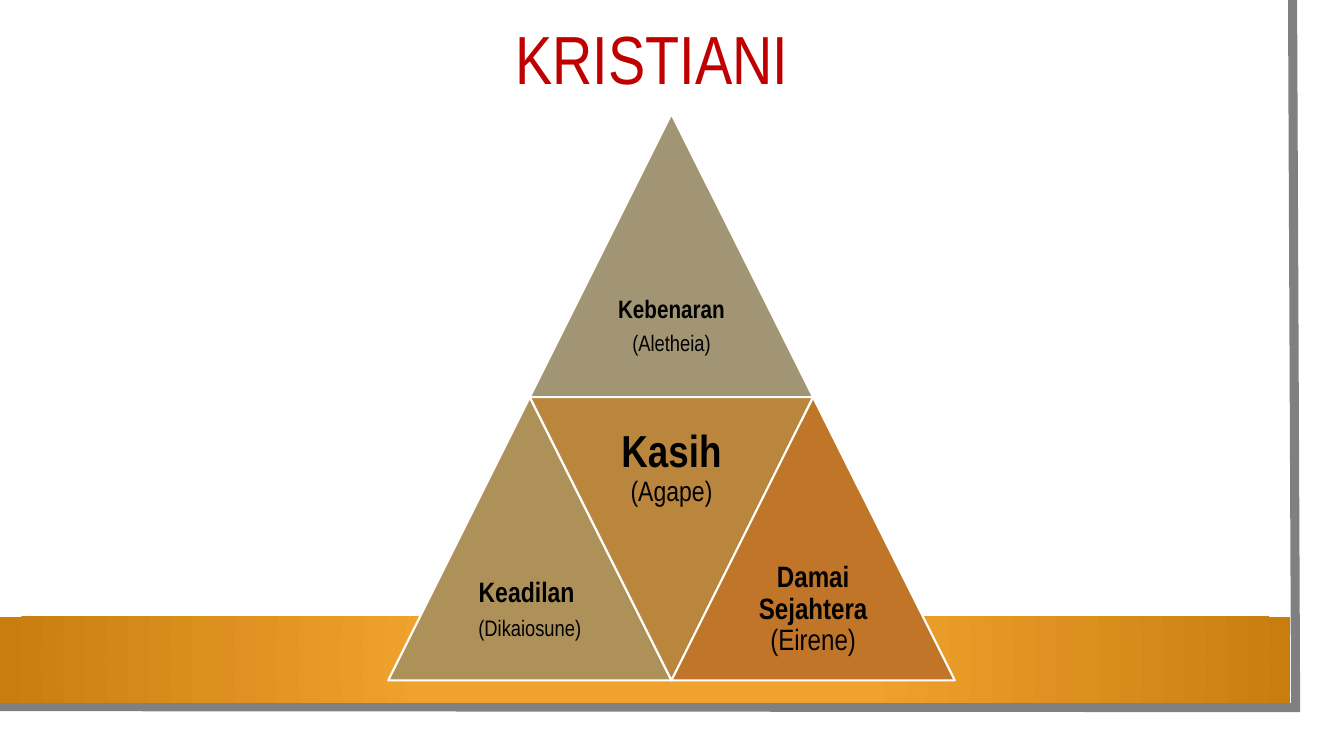
import pptx
import pptx.dml.color
import pptx.enum.shapes
import pptx.enum.text
import pptx.oxml
import pptx.oxml.ns
import pptx.util

FONT = "Arial Narrow"
WIDTH, HEIGHT = 13.33, 7.5
GRID_LEFT, GRID_TOP, CELL = 3.85, 1.13, 1.405

TRIANGLES = [
    (1, 0, False, "A19574", 0.07, [[("Kebenaran", 18, True)], [("(Aletheia)", 16, False)]]),
    (0, 2, False, "AE9159", 0.08, [[("Keadilan ", 20, True)], [("(Dikaiosune)", 16, False)]]),
    (1, 2, True, "BA863E", 0.13, [[("Kasih", 32, True), (" (Agape)", 20, False)]]),
    (2, 2, False, "C17529", 0.09, [[("Damai Sejahtera ", 21, True), ("(Eirene)", 21, False)]]),
]


def inches(*values):
    return [pptx.util.Inches(value) for value in values]


def grid_box(column, row, span):
    return inches(GRID_LEFT + column * CELL, GRID_TOP + row * CELL, span * CELL, span * CELL)


def color(hex_code):
    return pptx.dml.color.RGBColor.from_string(hex_code)


def add_run(paragraph, text, size=18, bold=False, hex_code="000000"):
    run = paragraph.add_run()
    run.text = text
    run.font.name = FONT
    run.font.size = pptx.util.Pt(size)
    run.font.bold = bold
    run.font.color.rgb = color(hex_code)


def format_paragraph(paragraph, space_after=0):
    paragraph.alignment = pptx.enum.text.PP_ALIGN.CENTER
    paragraph.line_spacing = 0.9
    paragraph.space_before = pptx.util.Pt(0)
    paragraph.space_after = pptx.util.Pt(space_after)


def format_frame(frame, inset):
    frame.word_wrap = True
    frame.auto_size = pptx.enum.text.MSO_AUTO_SIZE.NONE
    frame.vertical_anchor = pptx.enum.text.MSO_ANCHOR.MIDDLE
    margin = pptx.util.Inches(inset)
    frame.margin_left = frame.margin_right = margin
    frame.margin_top = frame.margin_bottom = margin


def add_page_edge(slide):
    builder = slide.shapes.build_freeform(*inches(12.82, 0), scale=1.0)
    builder.add_line_segments([inches(12.85, 7.02), inches(0, 7.01)], close=False)
    edge = builder.convert_to_shape()
    edge.shadow.inherit = False
    edge.fill.background()
    edge.line.color.rgb = color("808080")
    edge.line.width = pptx.util.Pt(6.5)
    miter = pptx.oxml.parse_xml(f'<a:miter {pptx.oxml.ns.nsdecls("a")} lim="800000"/>')
    edge.line._get_or_add_ln().append(miter)


def add_band(slide):
    band = slide.shapes.add_shape(
        pptx.enum.shapes.MSO_SHAPE.RECTANGLE, *inches(0, 6.12, 12.8, 0.85))
    band.shadow.inherit = False
    band.line.fill.background()
    band.fill.gradient()
    for stop, (position, hex_code) in zip(
            band.fill.gradient_stops, [(0.34, "F0A22E"), (1, "C87D0E")]):
        stop.position = position
        stop.color.rgb = color(hex_code)
    gradient = band._element.spPr.find(pptx.oxml.ns.qn("a:gradFill"))
    linear = gradient.find(pptx.oxml.ns.qn("a:lin"))
    gradient.replace(linear, pptx.oxml.parse_xml(
        f'<a:path {pptx.oxml.ns.nsdecls("a")} path="circle">'
        '<a:fillToRect l="50000" t="50000" r="50000" b="50000"/></a:path>'))


def add_title(slide, text):
    title = slide.shapes.title
    title.left, title.top, title.width, title.height = inches(0.78, 0.24, 11.37, 0.76)
    format_frame(title.text_frame, 0.05)
    paragraph = title.text_frame.paragraphs[0]
    format_paragraph(paragraph)
    add_run(paragraph, text, size=48.6, hex_code="C00000")


def add_triangle(slide, column, row, inverted, hex_code, inset, paragraphs):
    triangle = slide.shapes.add_shape(
        pptx.enum.shapes.MSO_SHAPE.ISOSCELES_TRIANGLE, *grid_box(column, row, 2))
    triangle.shadow.inherit = False
    triangle.rotation = 180 if inverted else 0
    triangle.fill.solid()
    triangle.fill.fore_color.rgb = color(hex_code)
    triangle.line.color.rgb = color("FFFFFF")
    triangle.line.width = pptx.util.Pt(1.5)

    label_row = row if inverted else row + 1
    label = slide.shapes.add_textbox(*grid_box(column + 0.5, label_row, 1))
    frame = label.text_frame
    format_frame(frame, inset)
    for index, runs in enumerate(paragraphs):
        paragraph = frame.add_paragraph() if index else frame.paragraphs[0]
        format_paragraph(paragraph, space_after=6)
        for text, size, bold in runs:
            add_run(paragraph, text, size=size, bold=bold)


def main():
    presentation = pptx.Presentation()
    presentation.slide_width, presentation.slide_height = inches(WIDTH, HEIGHT)
    slide = presentation.slides.add_slide(presentation.slide_layouts[5])
    add_page_edge(slide)
    add_band(slide)
    add_title(slide, "KRISTIANI")
    for triangle in TRIANGLES:
        add_triangle(slide, *triangle)
    presentation.save("out.pptx")


if __name__ == "__main__":
    main()
